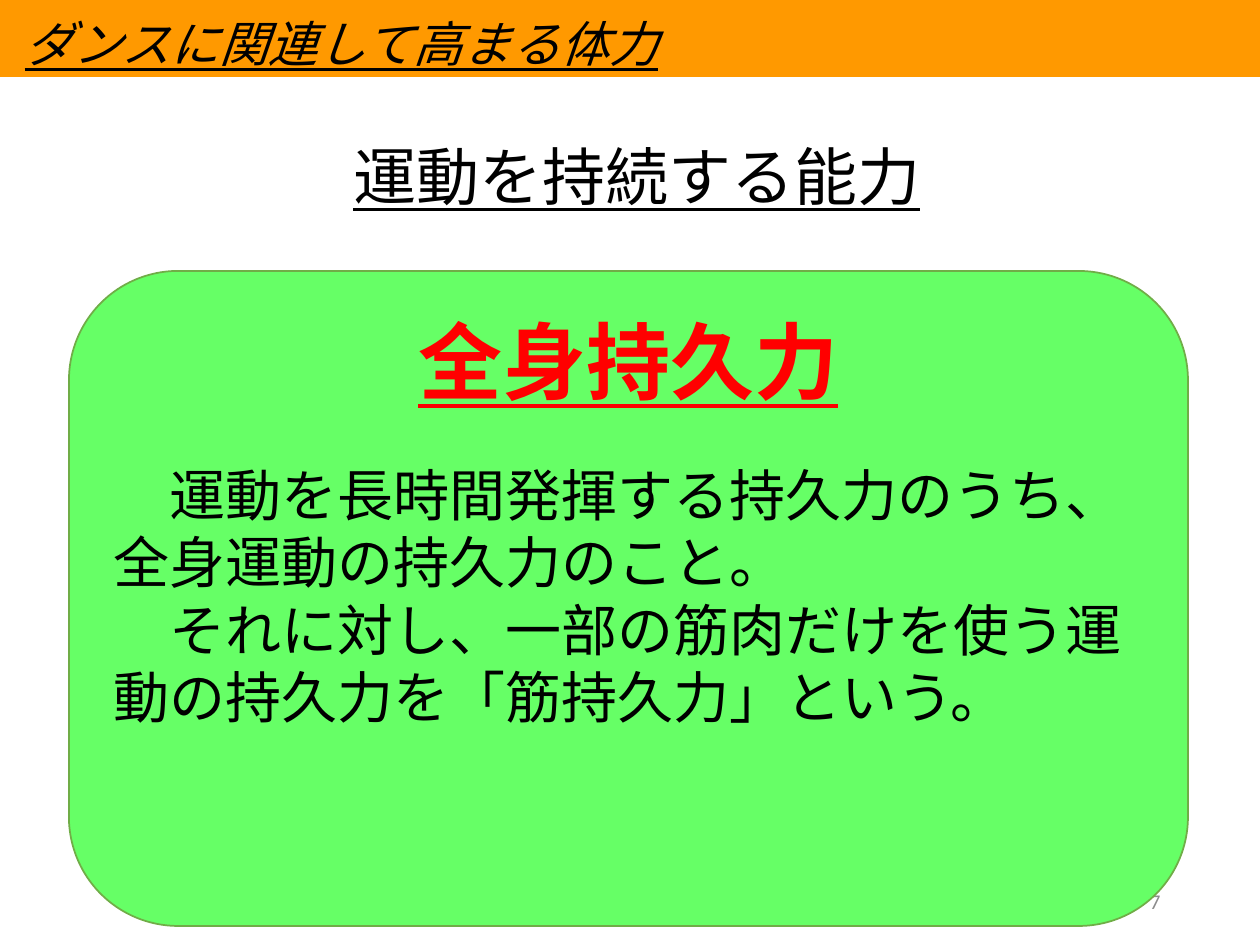
from dataclasses import dataclass

from pptx import Presentation
from pptx import util as u
from pptx.dml.color import RGBColor
from pptx.enum import shapes, text

MID, TOP = text.MSO_ANCHOR.MIDDLE, text.MSO_ANCHOR.TOP
LEFT, MEAN, RIGHT = (text.PP_ALIGN.LEFT, text.PP_ALIGN.CENTER,
                     text.PP_ALIGN.RIGHT)
RECT = shapes.MSO_SHAPE.RECTANGLE
ROUND = shapes.MSO_SHAPE.ROUNDED_RECTANGLE


@dataclass(frozen=True)
class Theme:
    orange: str = "FF9900"
    green: str = "66FF66"
    edge: str = "70AD47"
    white: str = "FFFFFF"
    ink: str = "000000"
    red: str = "FF0000"
    gray: str = "8C8C8C"
    head: int = 28
    lead: int = 36
    term: int = 48
    body: int = 32
    page: int = 12
    font: str = "Calibri"
    sans: str = "Arial"


T = Theme()


def px(n):
    return u.Emu(round(n * 914400 / 126))


def add_box(slide, kind, at, fill, edge=None):
    box = slide.shapes.add_shape(kind, *map(px, at))
    box.shadow.inherit = False
    box.fill.solid()
    box.fill.fore_color.rgb = RGBColor.from_string(fill)
    if edge:
        box.line.color.rgb = RGBColor.from_string(edge)
        box.line.width = u.Pt(1)
    else:
        box.line.fill.background()
    return box


def add_label(slide, at):
    return slide.shapes.add_textbox(*map(px, at))


def set_frame(shape, anchor):
    frame = shape.text_frame
    frame.word_wrap = True
    frame.vertical_anchor = anchor
    return frame


def put_text(para, words, size, color, align=LEFT, name=T.font, **style):
    para.alignment = align
    run = para.add_run()
    run.text = words
    form = {"size": u.Pt(size), "name": name, **style}
    for key, value in form.items():
        setattr(run.font, key, value)
    run.font.color.rgb = RGBColor.from_string(color)


def add_card(slide):
    card = add_box(slide, ROUND, (69, 271, 1119, 655), T.green, T.edge)
    frame = set_frame(card, TOP)
    put_text(frame.paragraphs[0], "全身持久力", T.term, T.red, MEAN,
             bold=True, underline=True)
    frame.paragraphs[0].space_after = u.Pt(29)
    lines = (
        ("運動を長時間発揮する持久力のうち、", True),
        ("全身運動の持久力のこと。", False),
        ("それに対し、一部の筋肉だけを使う運", True),
        ("動の持久力を「筋持久力」という。", False),
    )
    for words, first in lines:
        para = frame.add_paragraph()
        put_text(para, words, T.body, T.ink, name=T.sans)
        if first:  # indent by one full-width character
            para._p.get_or_add_pPr().set("indent", str(u.Pt(T.body)))


def main():
    deck = Presentation()
    deck.slide_width, deck.slide_height = px(1260), px(945)
    slide = deck.slides.add_slide(deck.slide_layouts[6])

    add_box(slide, RECT, (-2, 0, 1262, 77), T.orange)
    head = set_frame(add_label(slide, (-9, 8, 701, 69)), MID)
    put_text(head.paragraphs[0], "ダンスに関連して高まる体力", T.head, T.ink,
             MEAN, italic=True, underline=True)

    lead = set_frame(add_box(slide, RECT, (341, 120, 643, 110), T.white), MID)
    put_text(lead.paragraphs[0], "運動を持続する能力", T.lead, T.ink,
             underline=True)

    page = set_frame(add_label(slide, (890, 876, 283, 50)), MID)
    put_text(page.paragraphs[0], "7", T.page, T.gray, RIGHT)
    add_card(slide)
    deck.save("out.pptx")


if __name__ == "__main__":
    main()
